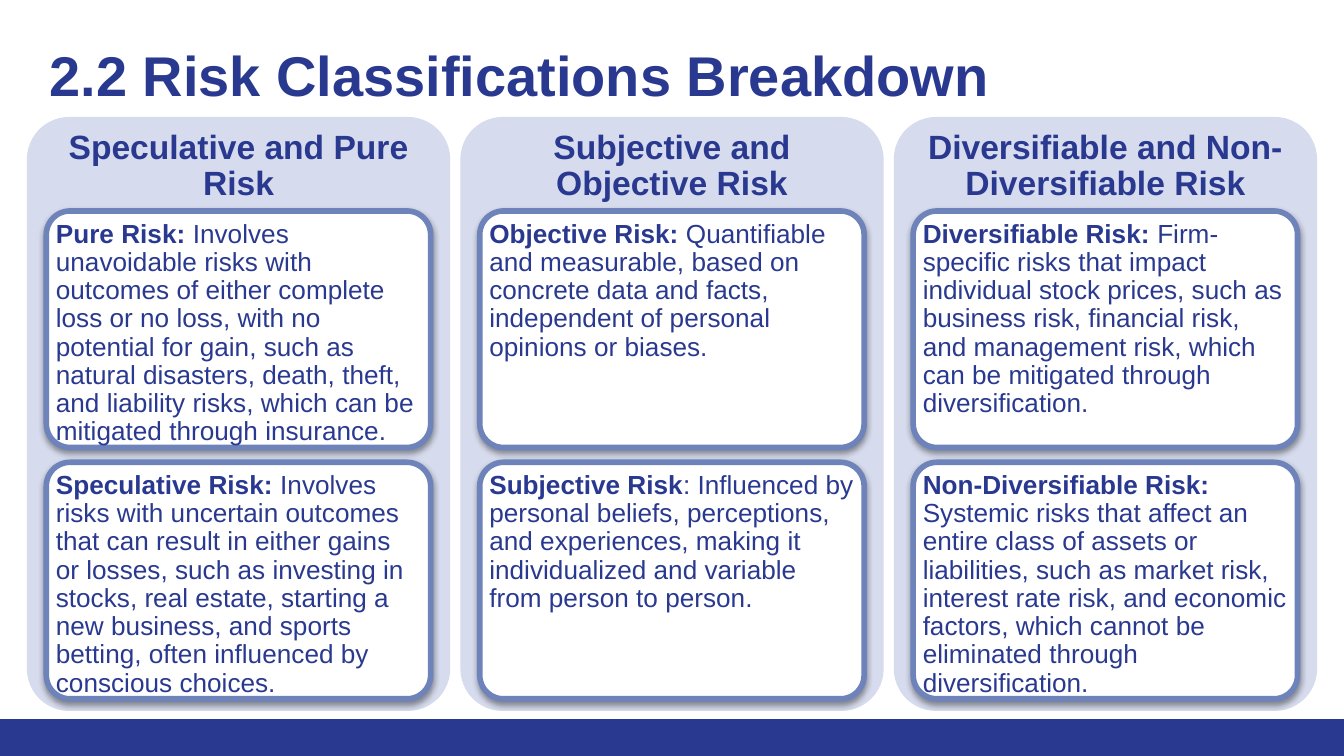
"""Build a slide that sets out three pairs of risk classifications."""
from lxml import etree
from pptx import Presentation
from pptx.dml.color import RGBColor
from pptx.enum.shapes import MSO_SHAPE
from pptx.enum.text import MSO_ANCHOR, PP_ALIGN
from pptx.oxml.ns import qn
from pptx.util import Inches, Pt

RECTANGLE = MSO_SHAPE.RECTANGLE
ROUNDED = MSO_SHAPE.ROUNDED_RECTANGLE
TOP = MSO_ANCHOR.TOP
LEFT, CENTER = PP_ALIGN.LEFT, PP_ALIGN.CENTER

FONT = "Arial"
COLORS = {
    "navy": "2A3990",
    "panel": "D6DBED",
    "card": "FFFFFF",
    "border": "6D83BA",
    "shadow": "000000",
}
PANEL_LEFT, PANEL_TOP, PANEL_WIDTH, PANEL_HEIGHT = 0.2, 0.87, 3.15, 4.42
PANEL_PITCH = 3.225
CARD_INDENT, CARD_TOP, CARD_WIDTH, CARD_HEIGHT = 0.145, 1.57, 2.86, 1.76
CARD_PITCH = 1.87

COLUMNS = [
    ("Speculative and Pure Risk", [
        ("Pure Risk: ", "Involves unavoidable risks with outcomes of either "
         "complete loss or no loss, with no potential for gain, such as natural "
         "disasters, death, theft, and liability risks, which can be mitigated "
         "through insurance."),
        ("Speculative Risk: ", "Involves risks with uncertain outcomes that can "
         "result in either gains or losses, such as investing in stocks, real "
         "estate, starting a new business, and sports betting, often influenced "
         "by conscious choices."),
    ]),
    ("Subjective and Objective Risk", [
        ("Objective Risk: ", "Quantifiable and measurable, based on concrete data "
         "and facts, independent of personal opinions or biases."),
        ("Subjective Risk", ": Influenced by personal beliefs, perceptions, and "
         "experiences, making it individualized and variable from person to "
         "person."),
    ]),
    ("Diversifiable and Non-Diversifiable Risk", [
        ("Diversifiable Risk: ", "Firm-specific risks that impact individual "
         "stock prices, such as business risk, financial risk, and management "
         "risk, which can be mitigated through diversification."),
        ("Non-Diversifiable Risk: ", "Systemic risks that affect an entire class "
         "of assets or liabilities, such as market risk, interest rate risk, and "
         "economic factors, which cannot be eliminated through diversification."),
    ]),
]


def color(name):
    """Return the named colour."""
    return RGBColor.from_string(COLORS[name])


def add_block(page, kind, bounds, fill):
    """Add a flat shape without an outline."""
    block = page.shapes.add_shape(kind, *map(Inches, bounds))
    block.shadow.inherit = False
    block.fill.solid()
    block.fill.fore_color.rgb = color(fill)
    block.line.fill.background()
    return block


def write_text(box, spans, size, inset, align=LEFT, spacing=0.9):
    """Fill a box with one paragraph of (text, bold) spans."""
    frame = box.text_frame
    frame.word_wrap = True
    frame.vertical_anchor = TOP
    frame.margin_left = frame.margin_right = Inches(inset)
    frame.margin_top = Inches(inset)
    frame.margin_bottom = 0
    para = frame.paragraphs[0]
    para.alignment = align
    para.line_spacing = spacing
    para.font.name = FONT
    para.font.size = Pt(size)
    para.font.color.rgb = color("navy")
    for text, bold in spans:
        span = para.add_run()
        span.text = text
        span.font.bold = bold


def add_shadow(shape):
    """Give a shape a soft shadow that falls straight down."""
    effects = shape._element.spPr.find(qn("a:effectLst"))
    shadow = etree.SubElement(
        effects, qn("a:outerShdw"), blurRad=str(Pt(3.1)), dist=str(Pt(1.6)),
        dir="5400000", algn="ctr", rotWithShape="0")
    tint = etree.SubElement(shadow, qn("a:srgbClr"), val=COLORS["shadow"])
    etree.SubElement(tint, qn("a:alpha"), val="38000")


def add_panel(page, left, heading):
    """Add the tinted column panel with its heading."""
    bounds = (left, PANEL_TOP, PANEL_WIDTH, PANEL_HEIGHT)
    panel = add_block(page, ROUNDED, bounds, "panel")
    panel.adjustments[0] = 0.1
    write_text(panel, [(heading, True)], 18, 0.01, CENTER)


def add_card(page, left, top, term, meaning):
    """Add a bordered card that defines one kind of risk."""
    card = add_block(page, ROUNDED, (left, top, CARD_WIDTH, CARD_HEIGHT), "card")
    card.adjustments[0] = 0.1
    card.line.color.rgb = color("border")
    card.line.width = Pt(3)
    add_shadow(card)
    write_text(card, [(term, True), (meaning, False)], 14, 0.02)


def add_title(page, text):
    """Add the slide title."""
    title = page.shapes.add_textbox(*map(Inches, (0.27, 0.2, 9.2, 0.89)))
    write_text(title, [(text, True)], 30, 0.1, spacing=1.0)


def main():
    """Build and save the deck."""
    deck = Presentation()
    deck.slide_width, deck.slide_height = Inches(10), Inches(5.625)
    page = deck.slides.add_slide(deck.slide_layouts[6])
    add_block(page, RECTANGLE, (0, 5.35, 10, 0.28), "navy")
    for column, (heading, cards) in enumerate(COLUMNS):
        left = PANEL_LEFT + column * PANEL_PITCH
        add_panel(page, left, heading)
        for row, (term, meaning) in enumerate(cards):
            top = CARD_TOP + row * CARD_PITCH
            add_card(page, left + CARD_INDENT, top, term, meaning)
    add_title(page, "2.2 Risk Classifications Breakdown")
    deck.save("out.pptx")


if __name__ == "__main__":
    main()
